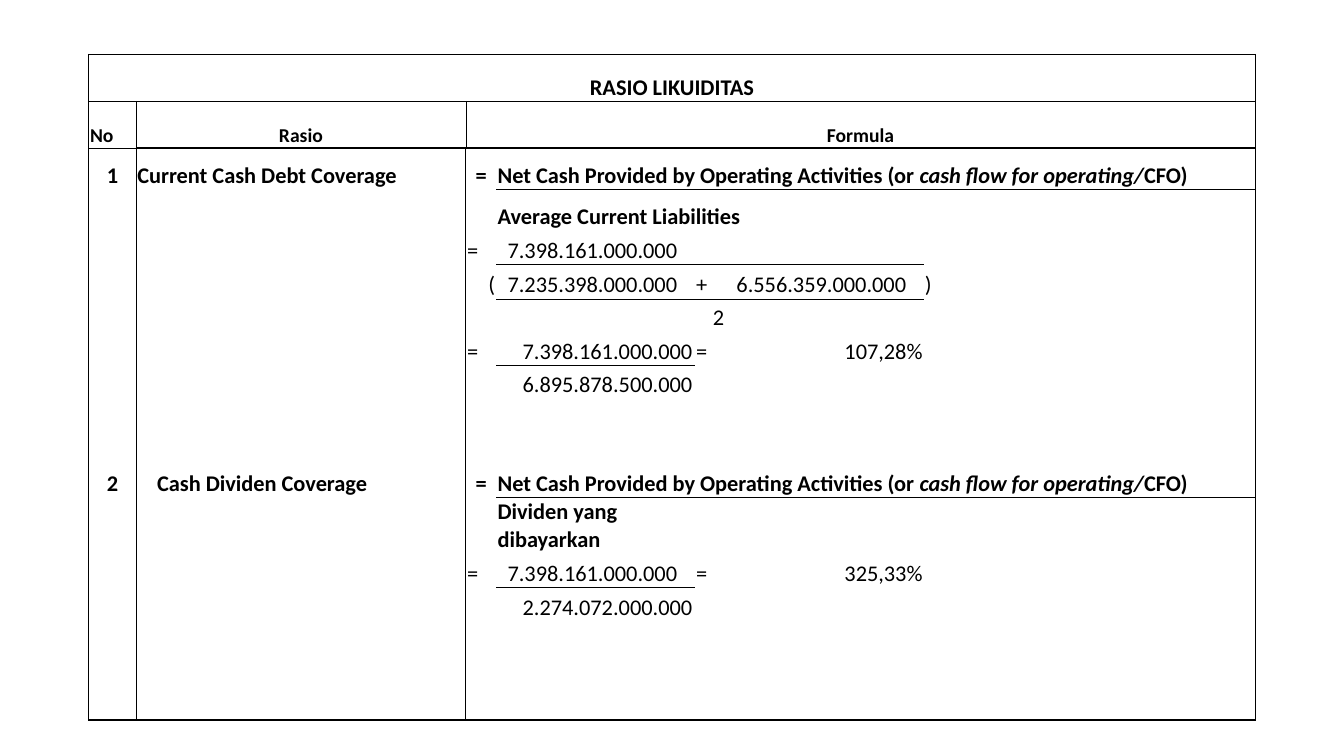
"""Build a slide with the table of liquidity ratios and their formulas."""
from lxml.etree import SubElement
from pptx import Presentation
from pptx.dml.color import RGBColor
from pptx.enum.text import MSO_ANCHOR, PP_ALIGN
from pptx.oxml.ns import qn
from pptx.util import Cm, Pt

BLACK = RGBColor(0, 0, 0)
LEFT, CENTER, RIGHT = PP_ALIGN.LEFT, PP_ALIGN.CENTER, PP_ALIGN.RIGHT
THIN, THICK = Pt(0.5), Pt(1)
SMALL, NARROW, WIDE, LABEL = 0.03, 0.28, 0.66, 0.53

COLUMN_WIDTHS = [1.19, 8.31, 0.77, 5, 0.77, 5, 0.74, 4.67, 0.61, 2.33]
ROW_HEIGHTS = [1.19, 1.17, 1.04, 1.04, 0.86, 0.86, 0.82, 0.86, 0.82,
               0.82, 0.82, 0.86, 1.04, 0.86, 0.86, 0.82, 0.82, 0.84]
LAST_ROW, LAST_COLUMN = len(ROW_HEIGHTS), len(COLUMN_WIDTHS)

CASH_FLOW = "Net Cash Provided by Operating Activities (or |cash flow for operating/|CFO)"
OPERATING_CASH = "7.398.161.000.000"

# row, column, columns spanned, alignment, bold, left margin, text
ENTRIES = [
    (0, 0, 10, CENTER, True, SMALL, "RASIO LIKUIDITAS"),
    (1, 0, 1, LEFT, True, SMALL, "No"),
    (1, 1, 1, CENTER, True, SMALL, "Rasio"),
    (1, 2, 8, CENTER, True, SMALL, "Formula"),
    (2, 0, 1, CENTER, True, SMALL, "1"),
    (2, 1, 1, LEFT, True, SMALL, "Current Cash Debt Coverage"),
    (2, 2, 1, CENTER, True, SMALL, "="),
    (2, 3, 7, LEFT, True, SMALL, CASH_FLOW),
    (3, 3, 3, LEFT, True, SMALL, "Average Current Liabilities"),
    (4, 2, 1, LEFT, False, SMALL, "="),
    (4, 3, 1, LEFT, False, NARROW, OPERATING_CASH),
    (5, 2, 1, RIGHT, False, SMALL, "("),
    (5, 3, 1, LEFT, False, NARROW, "7.235.398.000.000"),
    (5, 4, 1, LEFT, False, SMALL, "+"),
    (5, 5, 1, LEFT, False, NARROW, "6.556.359.000.000"),
    (5, 6, 1, LEFT, False, SMALL, ")"),
    (6, 4, 1, RIGHT, False, SMALL, "2"),
    (7, 2, 1, LEFT, False, SMALL, "="),
    (7, 3, 1, LEFT, False, WIDE, OPERATING_CASH),
    (7, 4, 1, LEFT, False, SMALL, "="),
    (7, 5, 1, RIGHT, False, SMALL, "107,28%"),
    (8, 3, 1, LEFT, False, WIDE, "6.895.878.500.000"),
    (11, 0, 1, CENTER, True, SMALL, "2"),
    (11, 1, 1, LEFT, True, LABEL, "Cash Dividen Coverage"),
    (11, 2, 1, CENTER, True, SMALL, "="),
    (11, 3, 7, LEFT, True, SMALL, CASH_FLOW),
    (12, 3, 2, LEFT, True, SMALL, "Dividen yang dibayarkan"),
    (13, 2, 1, LEFT, False, SMALL, "="),
    (13, 3, 1, LEFT, False, NARROW, OPERATING_CASH),
    (13, 4, 1, LEFT, False, SMALL, "="),
    (13, 5, 1, RIGHT, False, SMALL, "325,33%"),
    (14, 3, 1, LEFT, False, WIDE, "2.274.072.000.000"),
]

# boundary, start, end, line width
HORIZONTAL_RULES = [
    (0, 0, 10, THICK), (1, 0, 10, THICK), (2, 0, 1, THIN), (2, 1, 10, THICK),
    (3, 3, 10, THIN), (5, 3, 6, THIN), (6, 3, 6, THIN), (8, 3, 4, THIN),
    (12, 3, 10, THIN), (14, 3, 4, THIN), (LAST_ROW, 0, 10, THICK),
]
VERTICAL_RULES = [
    (0, 0, LAST_ROW, THICK), (1, 1, 2, THIN), (1, 2, LAST_ROW, THICK),
    (2, 1, 2, THIN), (2, 2, LAST_ROW, THICK), (LAST_COLUMN, 0, LAST_ROW, THICK),
]

deck = Presentation()
deck.slide_width, deck.slide_height = Cm(33.87), Cm(19.05)
page = deck.slides.add_slide(deck.slide_layouts[6])
frame = page.shapes.add_table(LAST_ROW, LAST_COLUMN, Cm(2.24), Cm(1.37),
                              Cm(sum(COLUMN_WIDTHS)), Cm(sum(ROW_HEIGHTS)))
table = frame.table
table.first_row = table.horz_banding = False
for column, width in zip(table.columns, COLUMN_WIDTHS):
    column.width = Cm(width)
for row, height in zip(table.rows, ROW_HEIGHTS):
    row.height = Cm(height)

edges = {}
for boundary, start, end, width in HORIZONTAL_RULES:
    for column in range(start, end):
        edges[boundary - 1, column, "lnB"] = width
        edges[boundary, column, "lnT"] = width
for boundary, start, end, width in VERTICAL_RULES:
    for row in range(start, end):
        edges[row, boundary - 1, "lnR"] = width
        edges[row, boundary, "lnL"] = width
for row, column, span, *_ in ENTRIES:
    edges[row, column, "lnR"] = edges.get((row, column + span - 1, "lnR"))

CELL_FORMAT = {"margin_left": Cm(SMALL), "margin_right": Cm(SMALL),
               "margin_top": Cm(SMALL), "margin_bottom": 0,
               "vertical_anchor": MSO_ANCHOR.BOTTOM}
for row in range(LAST_ROW):
    for column in range(LAST_COLUMN):
        cell = table.cell(row, column)
        for name, value in CELL_FORMAT.items():
            setattr(cell, name, value)
        properties = cell._tc.get_or_add_tcPr()
        for side in ("lnL", "lnR", "lnT", "lnB"):
            line = SubElement(properties, qn(f"a:{side}"))
            width = edges.get((row, column, side))
            if width:
                line.set("w", str(width))
                paint = SubElement(line, qn("a:solidFill"))
                SubElement(paint, qn("a:srgbClr")).set("val", str(BLACK))
            else:
                SubElement(line, qn("a:noFill"))
        cell.fill.background()

for row, column, span, alignment, bold, margin, text in ENTRIES:
    cell = table.cell(row, column)
    if span > 1:
        cell.merge(table.cell(row, column + span - 1))
    cell.margin_left = Cm(margin)
    para = cell.text_frame.paragraphs[0]
    para.alignment = alignment
    for index, part in enumerate(text.split("|")):
        span_run = para.add_run()
        span_run.text = part
        span_format = {"name": "Calibri", "size": Pt(14 if row == 1 else 16),
                       "bold": bold, "italic": index == 1}
        for name, value in span_format.items():
            setattr(span_run.font, name, value)
        span_run.font.color.rgb = BLACK

deck.save("out.pptx")
